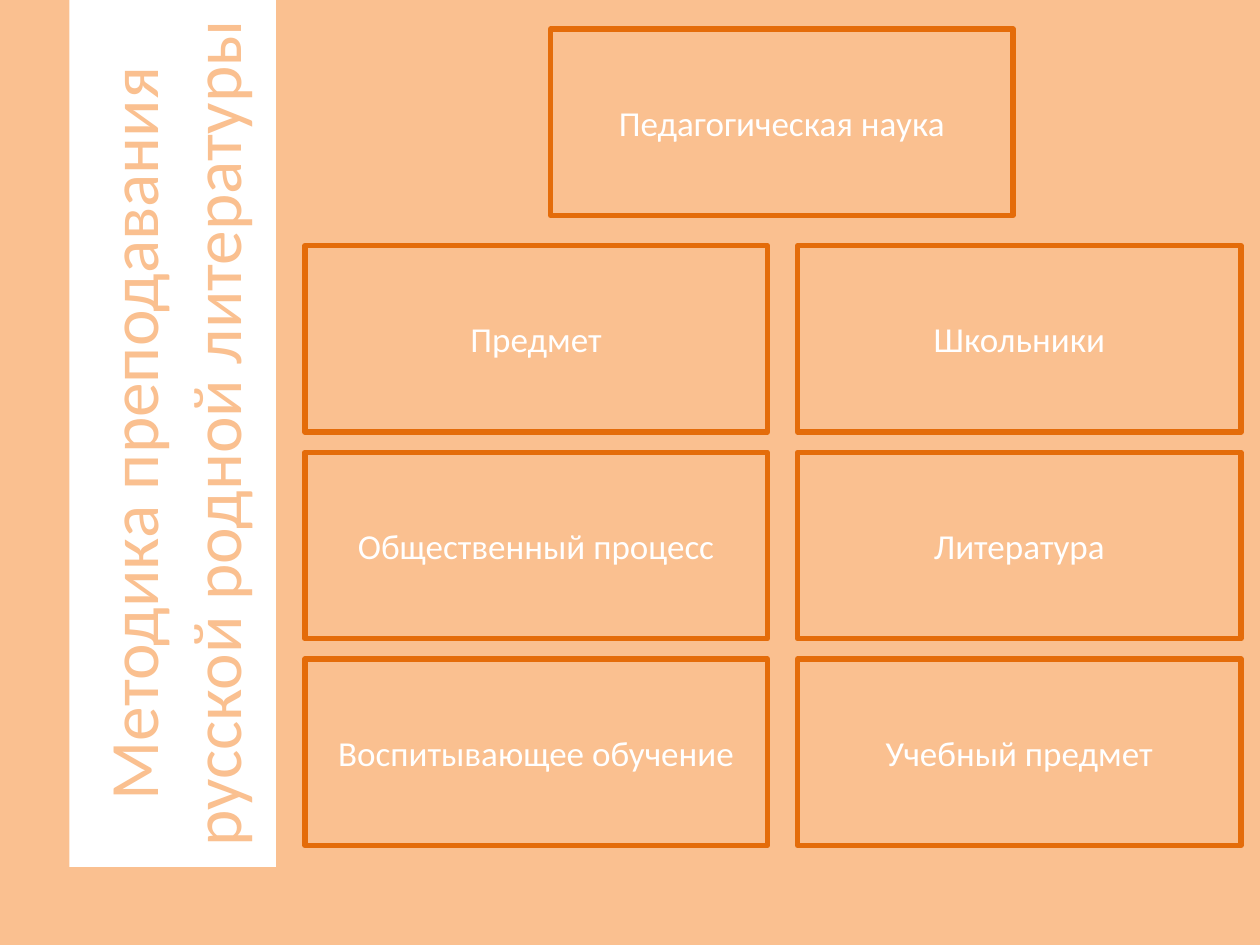
from dataclasses import dataclass
from typing import Optional

from pptx import Presentation
from pptx.dml.color import RGBColor
from pptx.enum.shapes import MSO_SHAPE
from pptx.enum.text import MSO_ANCHOR, PP_ALIGN
from pptx.util import Inches, Pt

COLORS = {"peach": "FAC090", "orange": "E46C0A", "white": "FFFFFF"}
FRAME_FORMAT = {"word_wrap": True, "vertical_anchor": MSO_ANCHOR.MIDDLE}


@dataclass
class Box:
    text: str
    left: float
    top: float
    width: float
    height: float = 1.48
    size: float = 20
    fill: str = "peach"
    color: str = "white"
    line: Optional[str] = "orange"
    rotation: float = 0


def rgb(name: str) -> RGBColor:
    return RGBColor.from_string(COLORS[name])


def draw_box(slide, box: Box) -> None:
    sp = slide.shapes.add_shape(
        MSO_SHAPE.RECTANGLE,
        Inches(box.left), Inches(box.top), Inches(box.width), Inches(box.height),
    )
    sp.shadow.inherit = False
    sp.rotation = box.rotation
    sp.fill.solid()
    sp.fill.fore_color.rgb = rgb(box.fill)
    if box.line:
        sp.line.color.rgb = rgb(box.line)
        sp.line.width = Pt(3)
    else:
        sp.line.fill.background()

    tf = sp.text_frame
    for name, value in FRAME_FORMAT.items():
        setattr(tf, name, value)
    p = tf.paragraphs[0]
    p.alignment = PP_ALIGN.CENTER
    r = p.add_run()
    r.text = box.text
    for name, value in {"name": "Calibri", "size": Pt(box.size)}.items():
        setattr(r.font, name, value)
    r.font.color.rgb = rgb(box.color)


# Vertical title band and the top box
TITLE = Box("Методика преподавания русской родной литературы",
            -2.07, 2.62, 6.88, 1.64, size=39.6, fill="white", color="peach",
            line=None, rotation=270)
TOP_BOX = Box("Педагогическая наука", 4.37, 0.23, 3.67)

# Two columns of boxes: left, width, texts
COLUMNS = [
    (2.42, 3.67, ["Предмет", "Общественный процесс", "Воспитывающее обучение"]),
    (6.33, 3.52, ["Школьники", "Литература", "Учебный предмет"]),
]
GRID_TOP, ROW_STEP = 1.95, 1.64


def main() -> None:
    prs = Presentation()
    prs.slide_width, prs.slide_height = Inches(10), Inches(7.5)
    slide = prs.slides.add_slide(prs.slide_layouts[6])

    # Background
    slide.background.fill.solid()
    slide.background.fill.fore_color.rgb = rgb("peach")

    grid = [
        Box(text, left, GRID_TOP + row * ROW_STEP, width)
        for left, width, texts in COLUMNS
        for row, text in enumerate(texts)
    ]
    for box in [TITLE, TOP_BOX, *grid]:
        draw_box(slide, box)

    prs.save("out.pptx")


if __name__ == "__main__":
    main()
